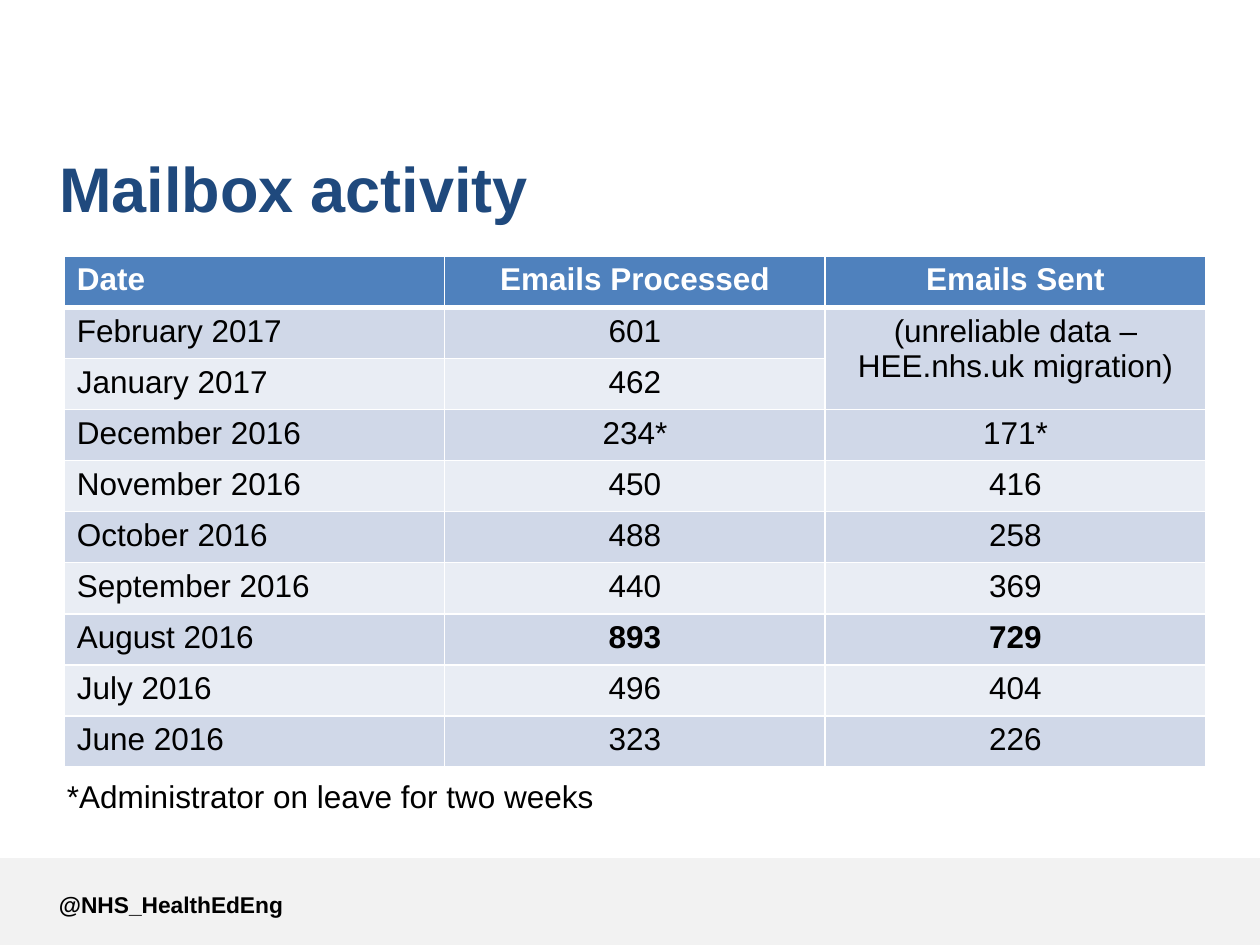
from dataclasses import dataclass

from lxml.etree import SubElement
from pptx import Presentation
from pptx.dml.color import RGBColor as RGB
from pptx.enum.shapes import MSO_SHAPE as Shape
from pptx.enum.text import MSO_ANCHOR as Anchor, MSO_AUTO_SIZE as Fit, PP_ALIGN as Align
from pptx.oxml.ns import qn
from pptx.util import Inches, Pt


@dataclass(frozen=True)
class Theme:
    """Colours, font and type sizes of the slide."""
    font: str = "Arial"
    title: str = "1F497D"
    text: str = "000000"
    white: str = "FFFFFF"
    header: str = "4F81BD"
    bands: tuple = ("D0D8E8", "E9EDF4")
    footer: str = "F2F2F2"
    title_size: int = 36
    body_size: int = 18
    footer_size: int = 13


T = Theme()
W, H = Inches(10), Inches(7.5)
REGIONS = {
    "title": (0.037, 0.149, 0.863, 0.099),
    "table": (0.051, 0.271, 0.906, 0.541),
    "note": (0.043, 0.816, 0.957, 0.088),
    "footer": (0, 0.908, 1, 0.092),
}
HEADINGS = ("Date", "Emails Processed", "Emails Sent")
ACTIVITY = (
    ("February 2017", "601", "(unreliable data – HEE.nhs.uk migration)"),
    ("January 2017", "462", ""),
    ("December 2016", "234*", "171*"),
    ("November 2016", "450", "416"),
    ("October 2016", "488", "258"),
    ("September 2016", "440", "369"),
    ("August 2016", "893", "729"),
    ("July 2016", "496", "404"),
    ("June 2016", "323", "226"),
)
PEAK = "August 2016"


def region(name):
    """Return a named region as left, top, width and height."""
    x, y, w, h = REGIONS[name]
    return int(x * W), int(y * H), int(w * W), int(h * H)


def place(sp, box):
    """Move a shape into a box."""
    for name, value in zip(("left", "top", "width", "height"), box):
        setattr(sp, name, value)


def write(tf, text, size, color=T.text, bold=False, align=Align.LEFT):
    """Write one formatted paragraph into a text frame."""
    p = tf.paragraphs[0]
    p.alignment = align
    r = p.add_run()
    r.text = text
    for name, value in {"name": T.font, "size": Pt(size), "bold": bold}.items():
        setattr(r.font, name, value)
    r.font.color.rgb = RGB.from_string(color)
    return p


def set_frame(tf, anchor):
    """Wrap a text frame, fix its size and anchor its text."""
    for name, value in {"word_wrap": True, "auto_size": Fit.NONE,
                        "vertical_anchor": anchor}.items():
        setattr(tf, name, value)


def add_title(s, box):
    """Fill the title placeholder."""
    sp = s.shapes.title
    place(sp, box)
    set_frame(sp.text_frame, Anchor.MIDDLE)
    write(sp.text_frame, "Mailbox activity", T.title_size, T.title, True)


def add_note(s, box):
    """Fill the body placeholder with the unbulleted table note."""
    sp = s.placeholders[1]
    place(sp, box)
    set_frame(sp.text_frame, Anchor.TOP)
    p = write(sp.text_frame, "*Administrator on leave for two weeks", T.body_size)
    p.space_before = Pt(0)
    pPr = p._p.get_or_add_pPr()
    pPr.set("marL", "0")
    pPr.set("indent", "0")
    SubElement(pPr, qn("a:buNone"))


def set_borders(cell, bottom):
    """Draw white borders, with the given bottom width in points."""
    tcPr = cell._tc.get_or_add_tcPr()
    for i, (side, width) in enumerate(zip("LRTB", (1, 1, 1, bottom))):
        ln = tcPr.makeelement(qn(f"a:ln{side}"), {"w": str(Pt(width))})
        fill = SubElement(ln, qn("a:solidFill"))
        SubElement(fill, qn("a:srgbClr"), val=T.white)
        tcPr.insert(i, ln)


def add_activity_table(s, box):
    """Build the banded table of monthly mailbox counts."""
    rows = (HEADINGS, *ACTIVITY)
    tbl = s.shapes.add_table(len(rows), len(HEADINGS), *box).table
    tbl.cell(1, 2).merge(tbl.cell(2, 2))
    for i, values in enumerate(rows):
        head = i == 0
        fill = T.header if head else T.bands[(i - 1) % 2]
        for j, value in enumerate(values):
            cell = tbl.cell(i, j)
            cell.fill.solid()
            cell.fill.fore_color.rgb = RGB.from_string(fill)
            set_borders(cell, 3 if head else 1)
            if value:
                write(cell.text_frame, value, T.body_size,
                      T.white if head else T.text,
                      head or (values[0] == PEAK and j > 0),
                      Align.CENTER if j else Align.LEFT)


def add_footer(s, box):
    """Draw the footer band and its account name."""
    x, y, w, h = box
    sp = s.shapes.add_shape(Shape.RECTANGLE, *box)
    sp.shadow.inherit = False
    sp.fill.solid()
    sp.fill.fore_color.rgb = RGB.from_string(T.footer)
    sp.line.fill.background()
    tb = s.shapes.add_textbox(x + int(0.037 * w), y + int(0.3 * h),
                              int(0.584 * w), int(0.58 * h))
    set_frame(tb.text_frame, Anchor.TOP)
    write(tb.text_frame, "@NHS_HealthEdEng", T.footer_size, bold=True)


def main():
    """Build and save the slide."""
    prs = Presentation()
    prs.slide_width, prs.slide_height = W, H
    s = prs.slides.add_slide(prs.slide_layouts[1])
    add_footer(s, region("footer"))
    add_title(s, region("title"))
    add_note(s, region("note"))
    add_activity_table(s, region("table"))
    prs.save("out.pptx")


if __name__ == "__main__":
    main()
